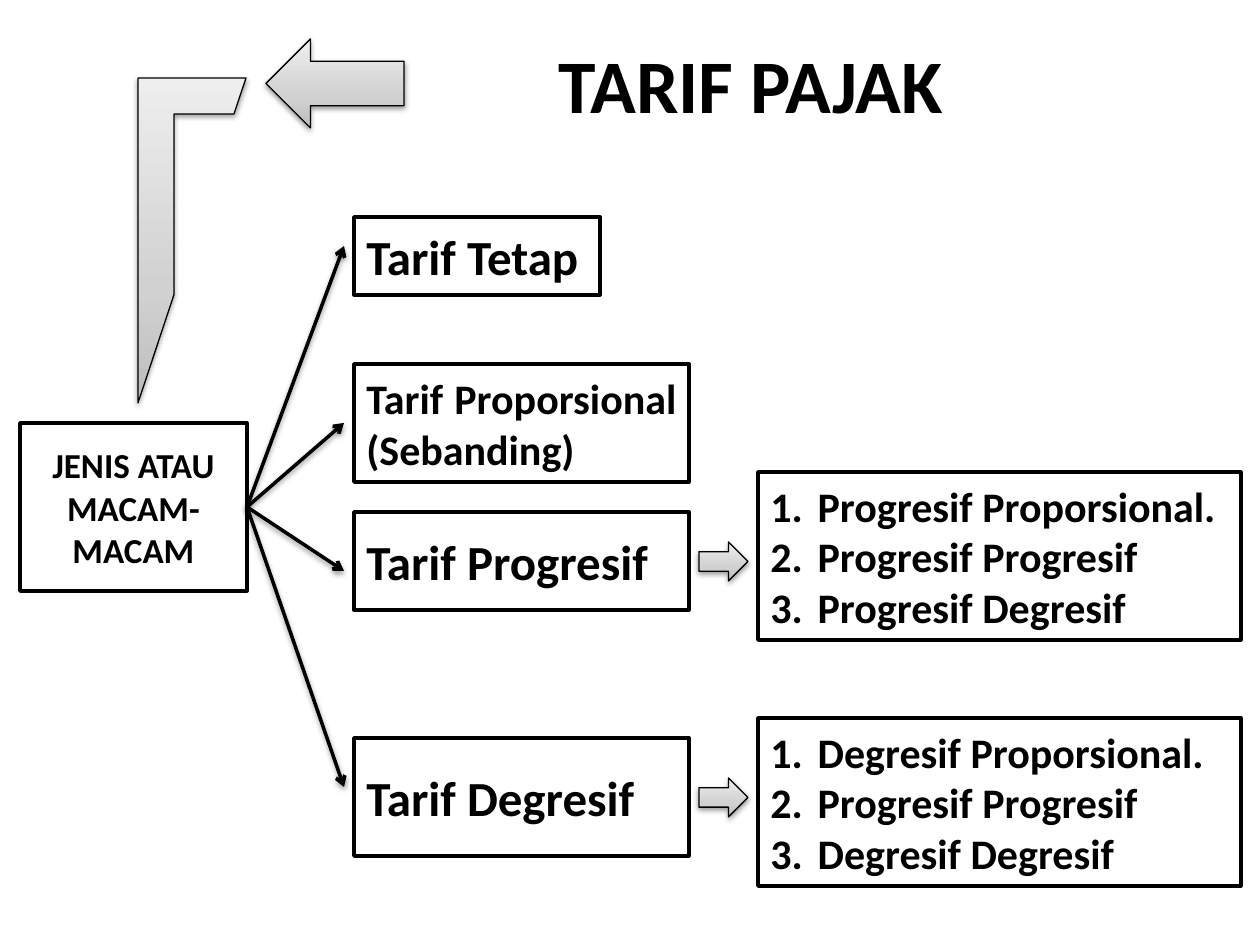
from pptx import Presentation
from pptx.dml.color import RGBColor
from pptx.enum.shapes import MSO_CONNECTOR, MSO_SHAPE
from pptx.enum.text import MSO_ANCHOR, PP_ALIGN
from pptx.oxml import parse_xml
from pptx.oxml.ns import nsdecls
from pptx.util import Emu, Pt

PX = 914400 // 126
FONT = "Calibri"
COLORS = {"ink": "000000", "paper": "FFFFFF",
          "dark": "BDBDBD", "middle": "D1D1D1", "light": "EEEEEE"}
GRADIENT = [(0, "dark"), (35, "middle"), (100, "light")]

# Boxes and arrows: left, top, width, height in px
TITLE = ("TARIF PAJAK", (63, 38, 1134, 91))
TITLE_SHIFT = 242
ROOT = ("JENIS ATAU MACAM-MACAM", (20, 423, 227, 168))
RATE_LEFT, RATE_WIDTH, ARROW_TIP_X = 354, 335, 344
RATES = [  # text, top, width, height, size, y of the arrow tip
    ("Tarif Tetap", 217, 246, 78, 28, 246),
    ("Tarif Proporsional (Sebanding)", 364, RATE_WIDTH, 118, 24, 423),
    ("Tarif Progresif", 512, RATE_WIDTH, 98, 28, 571),
    ("Tarif Degresif", 738, RATE_WIDTH, 118, 28, 787),
]
KIND_LEFT, KIND_WIDTH, KIND_HEIGHT = 758, 483, 168
KINDS = [  # items, top of the list, top of its arrow
    (["Progresif Proporsional.", "Progresif Progresif", "Progresif Degresif"], 472, 542),
    (["Degresif Proporsional.", "Progresif Progresif", "Degresif Degresif"], 718, 778),
]
BLOCKS = [
    (MSO_SHAPE.HALF_FRAME, (138, 78, 108, 325)),
    (MSO_SHAPE.LEFT_ARROW, (266, 39, 138, 89)),
] + [(MSO_SHAPE.RIGHT_ARROW, (699, top, 49, 39)) for _, _, top in KINDS]


def px(*values):
    return [Emu(value * PX) for value in values]


def color(name):
    return RGBColor.from_string(COLORS[name])


def write(shape, lines, size, align=PP_ALIGN.JUSTIFY, numbered=False):
    frame = shape.text_frame
    frame.word_wrap = True
    frame.vertical_anchor = MSO_ANCHOR.MIDDLE
    for index, line in enumerate(lines):
        paragraph = frame.paragraphs[0] if index == 0 else frame.add_paragraph()
        paragraph.alignment = align
        if numbered:
            properties = paragraph._p.get_or_add_pPr()
            properties.set("marL", "342900")
            properties.set("indent", "-342900")
            properties.append(parse_xml(
                f'<a:buAutoNum {nsdecls("a")} type="arabicPeriod"/>'))
        run = paragraph.add_run()
        run.text = line
        run.font.name = FONT
        run.font.size = Pt(size)
        run.font.bold = True
        run.font.color.rgb = color("ink")


def add_box(lines, place, size, **text_format):
    box = slide.shapes.add_shape(MSO_SHAPE.RECTANGLE, *px(*place))
    box.shadow.inherit = False
    box.fill.solid()
    box.fill.fore_color.rgb = color("paper")
    set_line(box, 2)
    write(box, lines, size, **text_format)
    return box


def set_line(shape, width):
    shape.line.color.rgb = color("ink")
    shape.line.width = Pt(width)


def add_shadow(shape):
    shape._element.spPr.append(parse_xml(
        f'<a:effectLst {nsdecls("a")}><a:outerShdw blurRad="40000" dist="20000" '
        f'dir="5400000" rotWithShape="0"><a:srgbClr val="{COLORS["ink"]}">'
        '<a:alpha val="38000"/></a:srgbClr></a:outerShdw></a:effectLst>'))


def add_block(kind, place):
    """Add a shaded grey shape with a thin outline."""
    block = slide.shapes.add_shape(kind, *px(*place))
    stops = "".join(
        f'<a:gs pos="{position * 1000}"><a:srgbClr val="{COLORS[name]}"/></a:gs>'
        for position, name in GRADIENT)
    block._element.spPr.append(parse_xml(
        f'<a:gradFill {nsdecls("a")} rotWithShape="1"><a:gsLst>{stops}</a:gsLst>'
        '<a:lin ang="16200000" scaled="0"/></a:gradFill>'))
    set_line(block, 0.75)
    add_shadow(block)


def add_arrow(source, tip_y):
    """Draw an arrow from the right side of source to the column of rates."""
    arrow = slide.shapes.add_connector(
        MSO_CONNECTOR.STRAIGHT, *px(247, 507, ARROW_TIP_X, tip_y))
    arrow.begin_connect(source, 3)
    set_line(arrow, 2)
    arrow.line._get_or_add_ln().append(
        parse_xml(f'<a:tailEnd {nsdecls("a")} type="arrow"/>'))
    add_shadow(arrow)


presentation = Presentation()
presentation.slide_width, presentation.slide_height = px(1260, 945)
slide = presentation.slides.add_slide(presentation.slide_layouts[6])

title_text, title_place = TITLE
title = slide.shapes.add_textbox(*px(*title_place))
title.text_frame.margin_left = Emu(TITLE_SHIFT * PX + 91440)
write(title, [title_text], 43.2, align=PP_ALIGN.CENTER)

root_text, root_place = ROOT
root = add_box([root_text], root_place, 20, align=PP_ALIGN.CENTER)
for text, top, width, height, size, tip_y in RATES:
    add_box([text], (RATE_LEFT, top, width, height), size)
    add_arrow(root, tip_y)
for items, top, _ in KINDS:
    add_box(items, (KIND_LEFT, top, KIND_WIDTH, KIND_HEIGHT), 24, numbered=True)
for kind, place in BLOCKS:
    add_block(kind, place)

presentation.save("out.pptx")
